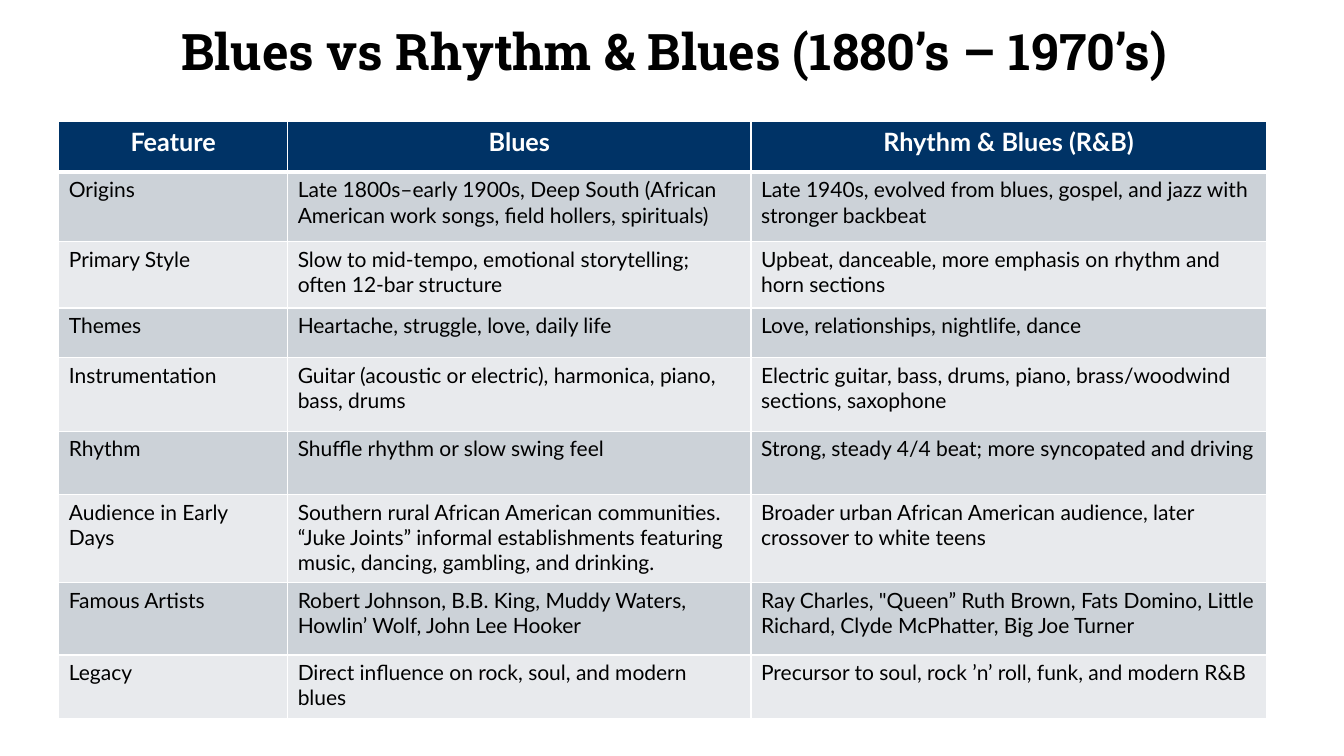
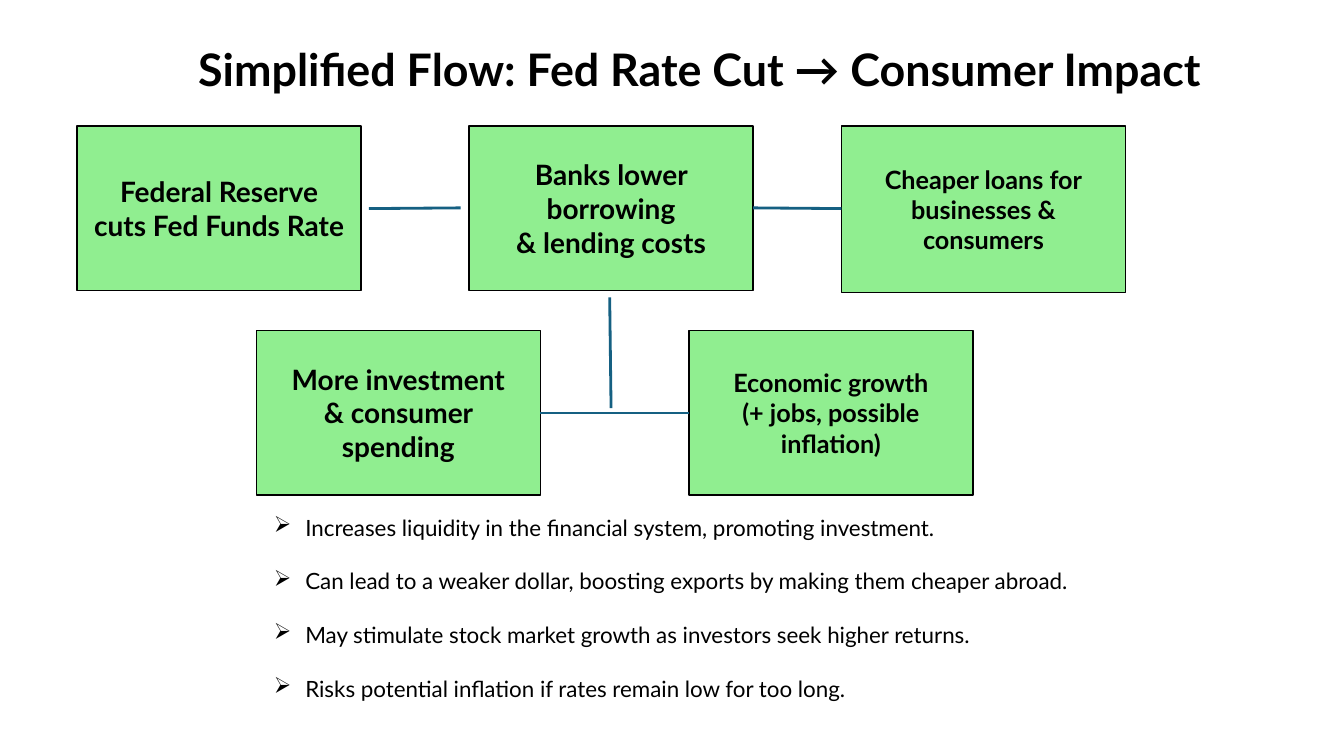
"""Builds two slides: a music comparison table and a rate cut flow."""
from lxml import etree
from pptx import Presentation
from pptx.dml.color import RGBColor
from pptx.enum import shapes, text
from pptx.oxml import ns
from pptx.util import Pt

COLORS = {
    "ink": "000000",
    "paper": "FFFFFF",
    "header": "003366",
    "band_dark": "CCD2D8",
    "band_light": "E8EAED",
    "step": "90EE90",
    "link": "156082",
}
BODY_FONT = "Lato"
TITLE_FONT = "Roboto Slab"
CENTER = text.PP_ALIGN.CENTER
LEFT = text.PP_ALIGN.LEFT
MIDDLE = text.MSO_ANCHOR.MIDDLE
TOP = text.MSO_ANCHOR.TOP

COLUMN_WIDTHS = [163.5, 331, 368]
ROW_HEIGHTS = [36, 49.5, 47.5, 35.5, 52.5, 45.5, 62.5, 52, 45.5]
GENRE_ROWS = [
    ("Feature", "Blues", "Rhythm & Blues (R&B)"),
    ("Origins",
     "Late 1800s–early 1900s, Deep South (African American work songs, field hollers, spirituals)",
     "Late 1940s, evolved from blues, gospel, and jazz with stronger backbeat"),
    ("Primary Style",
     "Slow to mid-tempo, emotional storytelling; often 12-bar structure",
     "Upbeat, danceable, more emphasis on rhythm and horn sections"),
    ("Themes",
     "Heartache, struggle, love, daily life",
     "Love, relationships, nightlife, dance"),
    ("Instrumentation",
     "Guitar (acoustic or electric), harmonica, piano, bass, drums",
     "Electric guitar, bass, drums, piano, brass/woodwind sections, saxophone"),
    ("Rhythm",
     "Shuffle rhythm or slow swing feel",
     "Strong, steady 4/4 beat; more syncopated and driving"),
    ("Audience in Early Days",
     "Southern rural African American communities.\n"
     "“Juke Joints” informal establishments featuring music, dancing, gambling, and drinking.",
     "Broader urban African American audience, later crossover to white teens"),
    ("Famous Artists",
     "Robert Johnson, B.B. King, Muddy Waters, Howlin’ Wolf, John Lee Hooker",
     "Ray Charles, \"Queen” Ruth Brown, Fats Domino, Little Richard, Clyde McPhatter, Big Joe Turner"),
    ("Legacy",
     "Direct influence on rock, soul, and modern blues",
     "Precursor to soul, rock ’n’ roll, funk, and modern R&B"),
]

STEP_WIDTH, STEP_HEIGHT = 203, 117.5
STEPS = [
    (0, 0, STEP_HEIGHT, 20, "Federal Reserve\ncuts Fed Funds Rate"),
    (280, 0, STEP_HEIGHT, 20, "Banks lower borrowing\n& lending costs"),
    (546, 0, 119, 18, "Cheaper loans for\nbusinesses & consumers"),
    (128, 146, STEP_HEIGHT, 20, "More investment\n& consumer spending"),
    (437, 146, STEP_HEIGHT, 18, "Economic growth\n(+ jobs, possible inflation)"),
]
LINKS = [
    (208.5, 59, 274, 58.5),
    (483, 58.5, 546, 59),
    (380.5, 122.5, 381.5, 201.5),
    (331, 205, 437, 205),
]
EFFECTS = (
    "Increases liquidity in the financial system, promoting investment.\n"
    "Can lead to a weaker dollar, boosting exports by making them cheaper abroad.\n"
    "May stimulate stock market growth as investors seek higher returns.\n"
    "Risks potential inflation if rates remain low for too long."
)


def rgb(name):
    """Return the named colour."""
    return RGBColor.from_string(COLORS[name])


def write(tf, content, size, font=BODY_FONT, color="ink", bold=False, align=LEFT,
          anchor=TOP, leading=None, after=0, bullet=None, indent=0):
    """Fill a text frame, one paragraph for each line of content."""
    tf.word_wrap = True
    tf.vertical_anchor = anchor
    for i, line in enumerate(content.split("\n")):
        p = tf.add_paragraph() if i else tf.paragraphs[0]
        p.alignment = align
        p.space_after = Pt(after)
        if leading:
            p.line_spacing = leading
        if bullet:
            pPr = p._p.get_or_add_pPr()
            pPr.set("marL", str(Pt(indent)))
            pPr.set("indent", str(-Pt(indent)))
            etree.SubElement(pPr, ns.qn("a:buChar"), char=bullet)
        r = p.add_run()
        r.text = line
        r.font.name = font
        r.font.size = Pt(size)
        r.font.bold = bold
        r.font.color.rgb = rgb(color)


def add_text(s, box, content, size, **fmt):
    """Add a text box at the given box."""
    write(s.shapes.add_textbox(*map(Pt, box)).text_frame, content, size, **fmt)


def add_title(s, box, content, size, **fmt):
    """Add a bold slide title."""
    add_text(s, box, content, size, bold=True, anchor=MIDDLE, **fmt)


def set_borders(cell, bottom):
    """Give a cell white borders, with its own bottom width."""
    tcPr = cell._tc.get_or_add_tcPr()
    for i, side in enumerate("LRTB"):
        ln = etree.Element(ns.qn(f"a:ln{side}"), w=str(Pt(bottom if side == "B" else 1)))
        fill = etree.SubElement(ln, ns.qn("a:solidFill"))
        etree.SubElement(fill, ns.qn("a:srgbClr"), val=COLORS["paper"])
        tcPr.insert(i, ln)


def add_genre_table(s, left, top):
    """Add the banded comparison table with its corner at left, top."""
    size = (sum(COLUMN_WIDTHS), sum(ROW_HEIGHTS))
    table = s.shapes.add_table(len(GENRE_ROWS), len(COLUMN_WIDTHS),
                               *map(Pt, (left, top, *size))).table
    for column, width in zip(table.columns, COLUMN_WIDTHS):
        column.width = Pt(width)
    for i, (row, height, values) in enumerate(zip(table.rows, ROW_HEIGHTS, GENRE_ROWS)):
        row.height = Pt(height)
        band = "header" if i == 0 else "band_dark" if i % 2 else "band_light"
        for cell, value in zip(row.cells, values):
            cell.fill.solid()
            cell.fill.fore_color.rgb = rgb(band)
            if i == 0:
                write(cell.text_frame, value, 18, color="paper", bold=True, align=CENTER)
            else:
                write(cell.text_frame, value, 15)
            set_borders(cell, 1 if i else 3)


def add_step(s, box, content, size):
    """Add one step of the flow."""
    sp = s.shapes.add_shape(shapes.MSO_SHAPE.RECTANGLE, *map(Pt, box))
    sp.shadow.inherit = False
    sp.fill.solid()
    sp.fill.fore_color.rgb = rgb("step")
    sp.line.color.rgb = rgb("ink")
    sp.line.width = Pt(1)
    write(sp.text_frame, content, size, bold=True, align=CENTER, anchor=MIDDLE)


def add_link(s, ends):
    """Add a plain line between two points."""
    link = s.shapes.add_connector(shapes.MSO_CONNECTOR.STRAIGHT, *map(Pt, ends))
    link.line.color.rgb = rgb("link")
    link.line.width = Pt(2)
    etree.SubElement(link._element.spPr, ns.qn("a:effectLst"))


def add_flow(s, left, top):
    """Add the steps and their links with the corner at left, top."""
    for x, y, height, size, content in STEPS:
        add_step(s, (left + x, top + y, STEP_WIDTH, height), content, size)
    for x1, y1, x2, y2 in LINKS:
        add_link(s, (left + x1, top + y1, left + x2, top + y2))


def build_genres(s):
    """Build the music comparison slide."""
    add_title(s, (122.5, 7, 737.5, 63), "Blues vs Rhythm & Blues (1880’s – 1970’s)", 36,
              font=TITLE_FONT, leading=0.9)
    add_genre_table(s, 42, 87)


def build_rate_cut(s):
    """Build the rate cut slide."""
    add_flow(s, 55, 90)
    add_title(s, (134.5, 26, 743, 46), "Simplified Flow: Fed Rate Cut → Consumer Impact", 32)
    add_text(s, (188.5, 363.5, 583, 158), EFFECTS, 16, after=19.2, bullet="➢", indent=22.5)


def main():
    """Build and save the presentation."""
    prs = Presentation()
    prs.slide_width, prs.slide_height = Pt(960), Pt(540)
    for build in (build_genres, build_rate_cut):
        build(prs.slides.add_slide(prs.slide_layouts[6]))
    prs.save("out.pptx")


if __name__ == "__main__":
    main()
